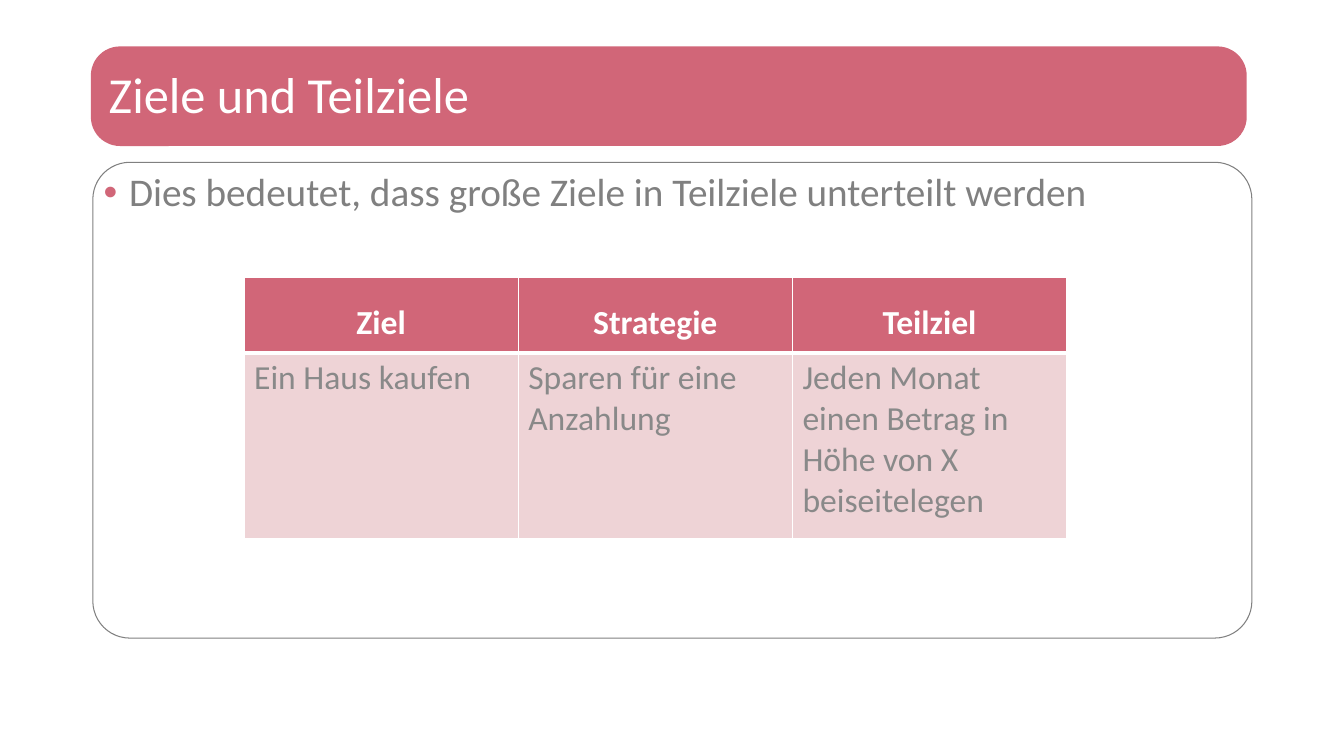
from lxml import etree
from pptx import Presentation
from pptx.dml.color import RGBColor
from pptx.enum.shapes import MSO_SHAPE
from pptx.enum.text import MSO_ANCHOR, MSO_AUTO_SIZE, PP_ALIGN
from pptx.oxml.ns import qn
from pptx.util import Cm, Pt

ROUND = MSO_SHAPE.ROUNDED_RECTANGLE
TOP, MIDDLE = MSO_ANCHOR.TOP, MSO_ANCHOR.MIDDLE
LEFT, CENTER = PP_ALIGN.LEFT, PP_ALIGN.CENTER
NO_FIT = MSO_AUTO_SIZE.NONE

ROSE = RGBColor(0xD1, 0x66, 0x78)
BLUSH = RGBColor(0xEE, 0xD3, 0xD6)
GRAY = RGBColor(0x80, 0x80, 0x80)
ASH = RGBColor(0x89, 0x89, 0x89)
WHITE = RGBColor(0xFF, 0xFF, 0xFF)

ROWS = [
    ["Ziel", "Strategie", "Teilziel"],
    ["Ein Haus kaufen", "Sparen für eine Anzahlung",
     "Jeden Monat einen Betrag in Höhe von X beiseitelegen"],
]


class Deck:
    font = "Calibri"

    def __init__(self):
        self.prs = Presentation()
        self.prs.slide_width = Cm(33.87)
        self.prs.slide_height = Cm(19.05)
        self.slide = self.prs.slides.add_slide(self.prs.slide_layouts[5])

    def label(self, frame, text, size, color, bold=False, align=LEFT, space=1.0):
        frame.word_wrap = True
        para = frame.paragraphs[0]
        para.text = text
        para.alignment = align
        para.line_spacing = space
        para.space_before = Pt(0)
        font = para.runs[0].font
        font.name, font.size, font.bold = self.font, Pt(size), bold
        font.color.rgb = color
        return para

    def pad(self, frame, anchor):
        frame.margin_left = frame.margin_right = 0
        frame.margin_top = frame.margin_bottom = 0
        frame.vertical_anchor = anchor

    def panel(self, left, top, width, height, curve, fill=None, line=None):
        shape = self.slide.shapes.add_shape(
            ROUND, Cm(left), Cm(top), Cm(width), Cm(height))
        shape.shadow.inherit = False
        shape.adjustments[0] = curve
        if fill is None:
            shape.fill.background()
        else:
            shape.fill.solid()
            shape.fill.fore_color.rgb = fill
        if line is None:
            shape.line.fill.background()
        else:
            shape.line.color.rgb = line
            shape.line.width = Pt(0.75)
        return shape

    def title(self, text):
        bar = self.panel(2.29, 1.17, 29.13, 2.51, 0.293, fill=ROSE)
        title = self.slide.shapes.title
        bar._element.addnext(title._element)
        title.left, title.top = Cm(2.74), Cm(1.57)
        title.width, title.height = Cm(28.4), Cm(1.83)
        frame = title.text_frame
        self.pad(frame, MIDDLE)
        frame.auto_size = NO_FIT
        self.label(frame, text, 36, WHITE, space=0.8)

    def body(self, text):
        box = self.panel(2.34, 4.09, 29.21, 11.99, 0.078, line=GRAY)
        frame = box.text_frame
        self.pad(frame, TOP)
        para = self.label(frame, text, 28, GRAY, space=0.9)
        props = para._p.get_or_add_pPr()
        props.set("marL", str(Cm(0.64)))
        props.set("indent", str(-Cm(0.64)))
        tint = etree.SubElement(props, qn("a:buClr"))
        etree.SubElement(tint, qn("a:srgbClr"), val=str(ROSE))
        etree.SubElement(props, qn("a:buFont"), typeface="Arial")
        etree.SubElement(props, qn("a:buChar"), char="•")

    def edge(self, cell, side, width):
        line = etree.SubElement(
            cell._tc.get_or_add_tcPr(), qn("a:" + side), w=str(Pt(width)))
        fill = etree.SubElement(line, qn("a:solidFill"))
        etree.SubElement(fill, qn("a:srgbClr"), val=str(WHITE))

    def table(self, rows):
        wide, heights = 6.91, [1.9, 4.67]
        table = self.slide.shapes.add_table(
            len(rows), len(rows[0]), Cm(6.15), Cm(6.99),
            Cm(wide * len(rows[0])), Cm(sum(heights))).table
        for col in table.columns:
            col.width = Cm(wide)
        for r, row in enumerate(rows):
            table.rows[r].height = Cm(heights[r])
            head = r == 0
            for c, text in enumerate(row):
                cell = table.cell(r, c)
                self.edge(cell, "lnL", 1)
                self.edge(cell, "lnR", 1)
                self.edge(cell, "lnT", 1 if head else 3)
                self.edge(cell, "lnB", 3 if head else 1)
                cell.fill.solid()
                cell.fill.fore_color.rgb = ROSE if head else BLUSH
                self.label(cell.text_frame, text, 24, WHITE if head else ASH,
                           head, CENTER if head else LEFT, 1.5 if head else 1.0)


def main():
    deck = Deck()
    deck.title("Ziele und Teilziele")
    deck.body("Dies bedeutet, dass große Ziele in Teilziele unterteilt werden")
    deck.table(ROWS)
    deck.prs.save("out.pptx")


if __name__ == "__main__":
    main()
